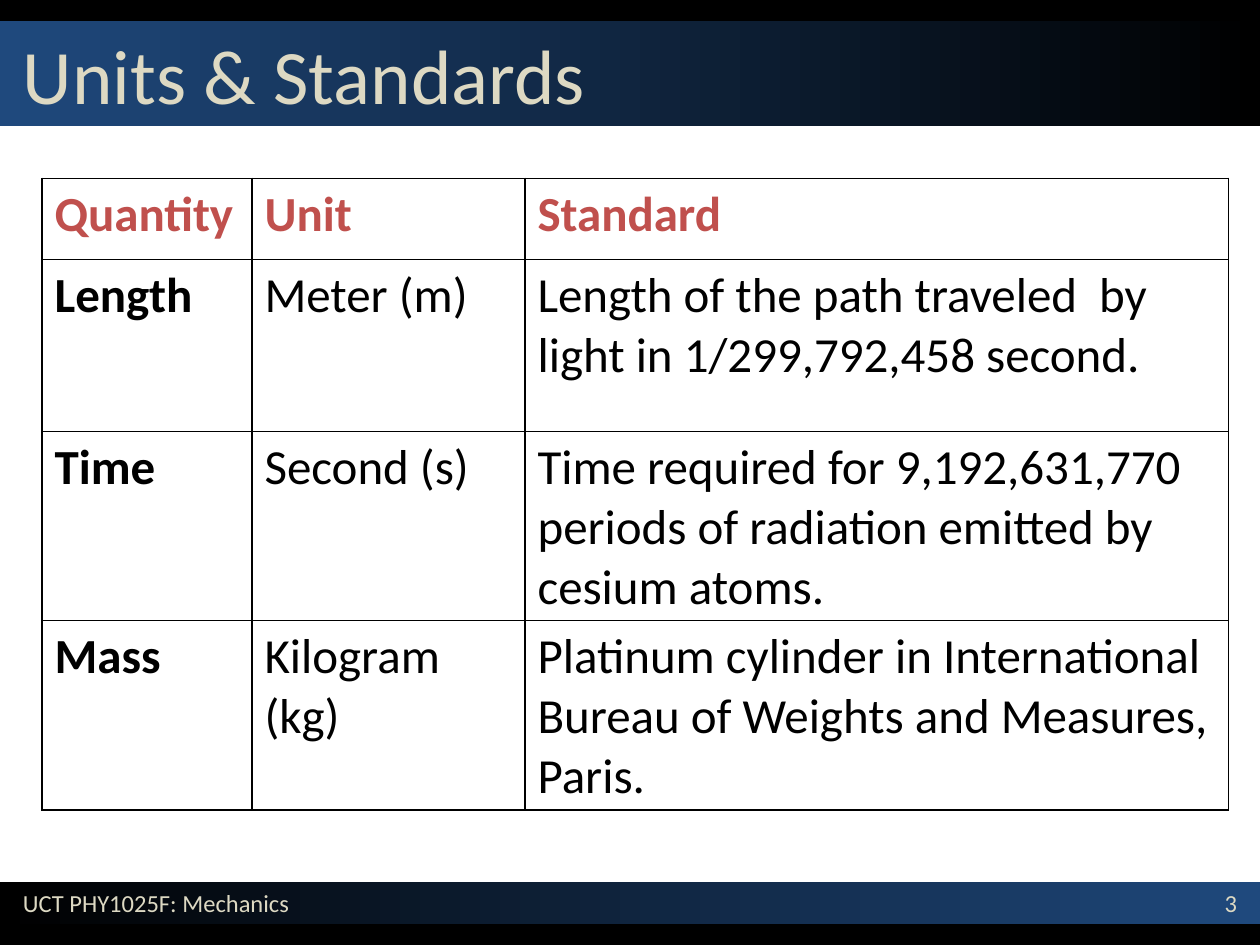
from dataclasses import dataclass

from lxml import etree
from pptx import Presentation
from pptx.dml.color import RGBColor
from pptx.enum.shapes import MSO_SHAPE
from pptx.enum.text import MSO_ANCHOR, PP_ALIGN
from pptx.oxml.ns import qn
from pptx.util import Pt

RECTANGLE = MSO_SHAPE.RECTANGLE
TOP, MIDDLE = MSO_ANCHOR.TOP, MSO_ANCHOR.MIDDLE
LEFT, RIGHT = PP_ALIGN.LEFT, PP_ALIGN.RIGHT
EMU_PER_PX = 7620
WIDTH, HEIGHT = 1200, 900


@dataclass(frozen=True)
class Theme:
    font: str = "Calibri"
    black: str = "000000"
    white: str = "FFFFFF"
    navy: str = "1F497D"
    sand: str = "DDD9C3"
    red: str = "C0504D"
    title_size: int = 44
    table_size: int = 28
    footer_size: int = 14
    border_width: int = 1


THEME = Theme()
COLUMN_WIDTHS = (200, 260, 670)
ROW_HEIGHTS = (77, 164, 164, 164)
ROWS = (
    ("Quantity", "Unit", "Standard"),
    ("Length", "Meter (m)",
     "Length of the path traveled  by light in 1/299,792,458 second."),
    ("Time", "Second (s)",
     "Time required for 9,192,631,770 periods of radiation emitted by cesium atoms."),
    ("Mass", "Kilogram (kg)",
     "Platinum cylinder in International Bureau of Weights and Measures, Paris."),
)


def px(*lengths):
    return [length * EMU_PER_PX for length in lengths]


def rgb(color):
    return RGBColor.from_string(color)


def apply_format(target, values):
    for name, value in values.items():
        setattr(target, name, value)


def write_text(frame, text, size, color, bold=False, align=LEFT):
    paragraph = frame.paragraphs[0]
    paragraph.alignment = align
    run = paragraph.add_run()
    run.text = text
    apply_format(run.font, {"name": THEME.font, "size": Pt(size), "bold": bold})
    run.font.color.rgb = rgb(color)


def add_text(slide, box, text, size, anchor=MIDDLE, align=LEFT):
    frame = slide.shapes.add_textbox(*px(*box)).text_frame
    apply_format(frame, {"word_wrap": True, "vertical_anchor": anchor})
    write_text(frame, text, size, THEME.sand, align=align)


def add_band(slide, box, colors):
    shape = slide.shapes.add_shape(RECTANGLE, *px(*box))
    shape.shadow.inherit = False
    shape.line.fill.background()
    if len(colors) == 1:
        shape.fill.solid()
        shape.fill.fore_color.rgb = rgb(colors[0])
        return
    shape.fill.gradient()
    shape.fill.gradient_angle = 0
    for stop, color in zip(shape.fill.gradient_stops, colors):
        stop.color.rgb = rgb(color)


def add_header(slide, box, title):
    left, top, width, height = box
    add_band(slide, (left, top, width, 40), [THEME.black])
    band_top, band_height = top + 20, height - 20
    add_band(slide, (left, band_top, width, band_height), [THEME.navy, THEME.black])
    add_text(slide, (left + 10, band_top, width - 20, band_height),
             title, THEME.title_size, anchor=TOP)


def add_footer(slide, box, course, number):
    left, top, width, height = box
    band_height = 40
    add_band(slide, (left, top + height - band_height, width, band_height), [THEME.black])
    add_band(slide, (left, top, width, band_height), [THEME.black, THEME.navy])
    add_text(slide, (left + width - 140, top, 130, band_height),
             number, THEME.footer_size, align=RIGHT)
    add_text(slide, (left + 10, top, 700, band_height), course, THEME.footer_size)


def set_borders(cell):
    properties = cell._tc.get_or_add_tcPr()
    for index, side in enumerate(("a:lnL", "a:lnR", "a:lnT", "a:lnB")):
        line = etree.Element(qn(side), w=str(Pt(THEME.border_width)))
        fill = etree.SubElement(line, qn("a:solidFill"))
        etree.SubElement(fill, qn("a:srgbClr"), val=THEME.black)
        properties.insert(index, line)


def add_units_table(slide, left, top):
    box = (left, top, sum(COLUMN_WIDTHS), sum(ROW_HEIGHTS))
    table = slide.shapes.add_table(len(ROWS), len(COLUMN_WIDTHS), *px(*box)).table
    apply_format(table, {"first_row": False, "horz_banding": False})
    for column, width in zip(table.columns, px(*COLUMN_WIDTHS)):
        column.width = width
    for row, height in zip(table.rows, px(*ROW_HEIGHTS)):
        row.height = height
    for row_index, texts in enumerate(ROWS):
        for column_index, text in enumerate(texts):
            cell = table.cell(row_index, column_index)
            cell.fill.solid()
            cell.fill.fore_color.rgb = rgb(THEME.white)
            set_borders(cell)
            is_header = row_index == 0
            write_text(cell.text_frame, text, THEME.table_size,
                       THEME.red if is_header else THEME.black,
                       bold=is_header or column_index == 0)


def main():
    presentation = Presentation()
    slide_width, slide_height = px(WIDTH, HEIGHT)
    apply_format(presentation, {"slide_width": slide_width, "slide_height": slide_height})
    slide = presentation.slides.add_slide(presentation.slide_layouts[6])
    add_header(slide, (0, 0, WIDTH, 120), "Units & Standards")
    add_footer(slide, (0, 840, WIDTH, 60), "UCT PHY1025F: Mechanics", "3")
    add_units_table(slide, 40, 170)
    presentation.save("out.pptx")


if __name__ == "__main__":
    main()
